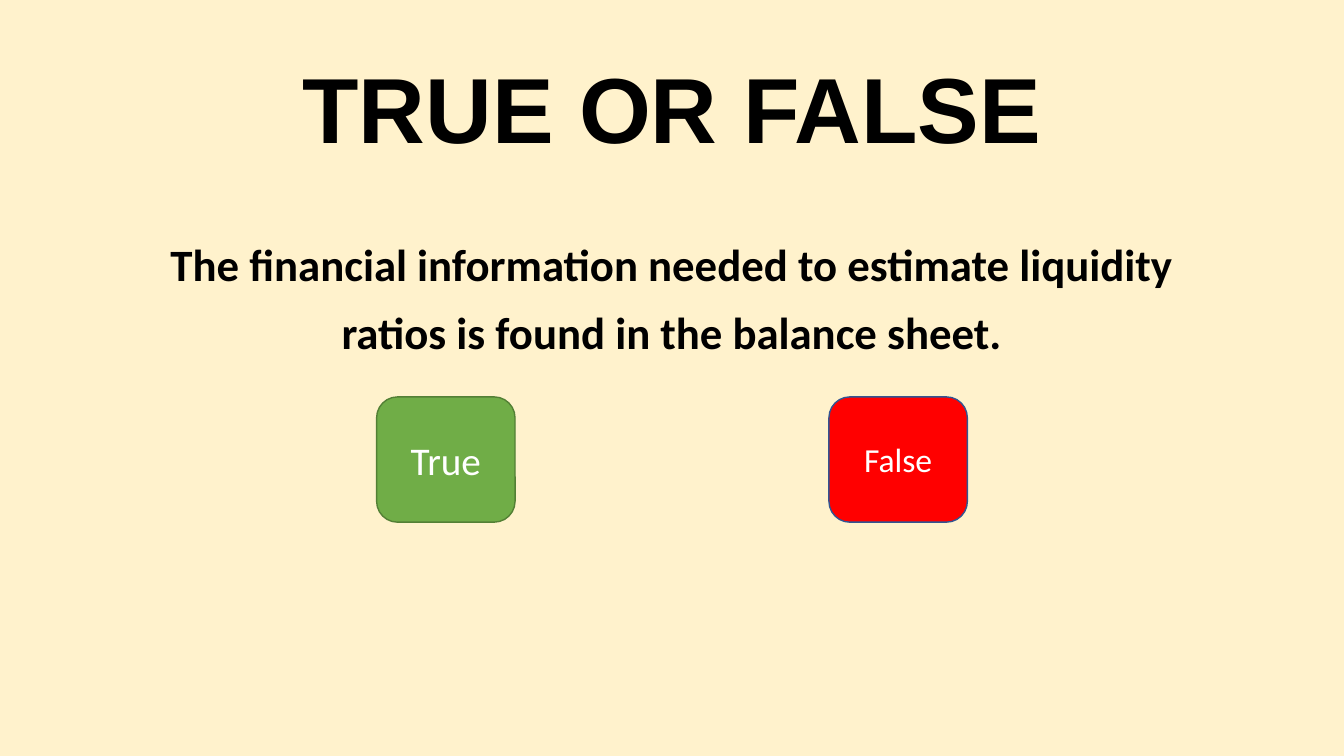
"""Build a true-or-false quiz slide."""
from pptx import Presentation
from pptx.dml.color import RGBColor
from pptx.enum.shapes import MSO_SHAPE
from pptx.enum.text import MSO_ANCHOR, PP_ALIGN
from pptx.util import Pt

CREAM = RGBColor(0xFF, 0xF2, 0xCC)
BLACK = RGBColor(0x00, 0x00, 0x00)
WHITE = RGBColor(0xFF, 0xFF, 0xFF)
RED = RGBColor(0xFF, 0x00, 0x00)
BLUE = RGBColor(0x32, 0x54, 0x91)
GREEN = RGBColor(0x70, 0xAD, 0x47)
DARK_GREEN = RGBColor(0x53, 0x80, 0x35)


def write_text(shape, text, font_name, size, color, bold, anchor):
    text_frame = shape.text_frame
    text_frame.word_wrap = True
    text_frame.vertical_anchor = anchor
    text_frame.text = text
    paragraph = text_frame.paragraphs[0]
    paragraph.alignment = PP_ALIGN.CENTER
    font = paragraph.runs[0].font
    font.name = font_name
    font.size = Pt(size)
    font.bold = bold
    font.color.rgb = color
    return paragraph


def add_title(slide, left, top, width, height):
    title = slide.shapes.add_textbox(Pt(left), Pt(top), Pt(width), Pt(height))
    paragraph = write_text(title, "TRUE OR FALSE", "Arial", 66, BLACK, True, MSO_ANCHOR.MIDDLE)
    paragraph.line_spacing = 0.9


def add_statement(slide, left, top, width, height):
    statement = slide.shapes.add_textbox(Pt(left), Pt(top), Pt(width), Pt(height))
    text = "The financial information needed to estimate liquidity ratios is found in the balance sheet."
    paragraph = write_text(statement, text, "Calibri", 32, BLACK, True, MSO_ANCHOR.TOP)
    paragraph.line_spacing = 1.25
    paragraph.space_after = Pt(8)


def add_answers(slide, left, top, width, height):
    button_width = 98.9
    answers = [("True", 28, GREEN, DARK_GREEN), ("False", 24, RED, BLUE)]
    step = (width - button_width) / (len(answers) - 1)
    for index, (text, size, fill_color, line_color) in enumerate(answers):
        button = slide.shapes.add_shape(
            MSO_SHAPE.ROUNDED_RECTANGLE,
            Pt(left + index * step), Pt(top), Pt(button_width), Pt(height))
        button.shadow.inherit = False
        button.fill.solid()
        button.fill.fore_color.rgb = fill_color
        button.line.color.rgb = line_color
        button.line.width = Pt(1)
        write_text(button, text, "Calibri", size, WHITE, False, MSO_ANCHOR.MIDDLE)


def main():
    presentation = Presentation()
    presentation.slide_width = Pt(960)
    presentation.slide_height = Pt(540)
    slide = presentation.slides.add_slide(presentation.slide_layouts[6])
    slide.background.fill.solid()
    slide.background.fill.fore_color.rgb = CREAM
    add_title(slide, 66, 28.75, 828, 104.4)
    add_answers(slide, 269, 283.5, 422, 89.5)
    add_statement(slide, 84.75, 156.25, 790.5, 104.4)
    presentation.save("out.pptx")


if __name__ == "__main__":
    main()
